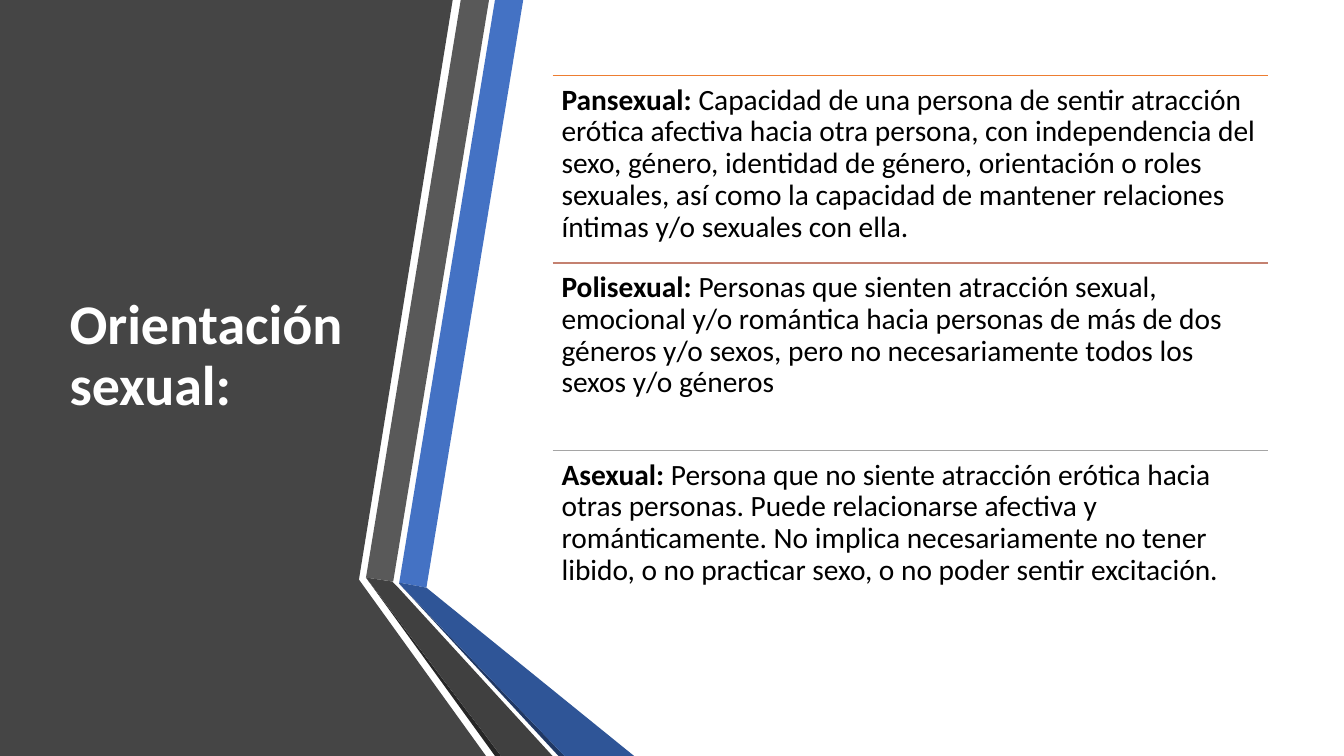
from dataclasses import dataclass

from lxml.etree import SubElement
from pptx import Presentation
from pptx.dml.color import RGBColor
from pptx.enum.shapes import MSO_CONNECTOR
from pptx.enum.text import MSO_ANCHOR, PP_ALIGN
from pptx.oxml.ns import qn
from pptx.util import Inches, Pt


@dataclass(frozen=True)
class Theme:
    font: str = "Calibri"
    title_size: int = 40
    body_size: int = 21
    title_color: str = "FFFFFF"
    body_color: str = "000000"
    panel: str = "454545"
    blue: str = "4472C4"
    blue_dark: str = "2F5597"
    blue_edge: str = "203864"
    gray: str = "595959"
    gray_dark: str = "404040"
    gray_edge: str = "262626"
    rules: tuple = ("ED7D31", "C48170", "A5A5A5")


THEME = Theme()
TITLE = "Orientación sexual:"
DEFINITIONS = [
    ("Pansexual:", " Capacidad de una persona de sentir atracción erótica afectiva hacia otra "
     "persona, con independencia del sexo, género, identidad de género, orientación o roles "
     "sexuales, así como la capacidad de mantener relaciones íntimas y/o sexuales con ella."),
    ("Polisexual:", " Personas que sienten atracción sexual, emocional y/o romántica hacia "
     "personas de más de dos géneros y/o sexos, pero no necesariamente todos los sexos y/o géneros"),
    ("Asexual:", " Persona que no siente atracción erótica hacia otras personas. Puede "
     "relacionarse afectiva y románticamente. No implica necesariamente no tener libido, "
     "o no practicar sexo, o no poder sentir excitación."),
]
BANDS = [
    (THEME.panel, [(0, 0), (4.49, 0), (3.56, 5.75), (4.82, 7.5), (0, 7.5)]),
    (THEME.blue, [(3.96, 5.78), (4.23, 5.83), (5.19, 0), (4.91, 0)]),
    (THEME.gray, [(4.85, 0), (4.57, 0), (3.63, 5.73), (3.9, 5.77)]),
    (THEME.gray_edge, [(3.63, 5.73), (4.91, 7.5), (4.97, 7.5)]),
    (THEME.blue_edge, [(3.96, 5.79), (5.54, 7.5), (5.6, 7.5)]),
    (THEME.blue_dark, [(3.96, 5.79), (5.6, 7.5), (6.29, 7.5), (4.23, 5.83), (3.96, 5.78)]),
    (THEME.gray_dark, [(5.48, 7.5), (3.95, 5.83), (3.89, 5.77), (3.63, 5.73), (4.97, 7.5)]),
]
LIST_LEFT, LIST_TOP, LIST_WIDTH, LIST_HEIGHT = 5.48, 0.75, 7.1, 5.58
ROW_HEIGHT = LIST_HEIGHT / len(DEFINITIONS)
INSET = 0.09


def style_run(run, size, color, bold):
    run.font.name = THEME.font
    run.font.size = Pt(size)
    run.font.bold = bold
    run.font.color.rgb = RGBColor.from_string(color)


def add_band(slide, color, points):
    corners = [(Inches(x), Inches(y)) for x, y in points]
    builder = slide.shapes.build_freeform(*corners[0])
    builder.add_line_segments(corners[1:], close=True)
    shape = builder.convert_to_shape()
    shape.shadow.inherit = False
    shape.fill.solid()
    shape.fill.fore_color.rgb = RGBColor.from_string(color)
    shape.line.fill.background()


def add_title(slide):
    title = slide.shapes.title
    title.left, title.top = Inches(0.59), Inches(LIST_TOP)
    title.width, title.height = Inches(3.04), Inches(LIST_HEIGHT)
    frame = title.text_frame
    frame.text = TITLE
    frame.word_wrap = True
    frame.vertical_anchor = MSO_ANCHOR.MIDDLE
    paragraph = frame.paragraphs[0]
    paragraph.alignment = PP_ALIGN.LEFT
    paragraph.line_spacing = 0.9
    style_run(paragraph.runs[0], THEME.title_size, THEME.title_color, True)
    slide.shapes._spTree.append(title._element)


def add_rule(slide, top, color):
    rule = slide.shapes.add_connector(
        MSO_CONNECTOR.STRAIGHT, Inches(LIST_LEFT), Inches(top),
        Inches(LIST_LEFT + LIST_WIDTH), Inches(top))
    rule.line.color.rgb = RGBColor.from_string(color)
    rule.line.width = Pt(1)
    SubElement(rule._element.spPr, qn("a:effectLst"))


def add_definition(slide, top, term, meaning):
    box = slide.shapes.add_textbox(
        Inches(LIST_LEFT), Inches(top), Inches(LIST_WIDTH), Inches(ROW_HEIGHT))
    frame = box.text_frame
    frame.word_wrap = True
    frame.margin_left = frame.margin_right = Inches(INSET)
    frame.margin_top = frame.margin_bottom = Inches(INSET)
    paragraph = frame.paragraphs[0]
    paragraph.line_spacing = 0.9
    for text, bold in ((term, True), (meaning, False)):
        run = paragraph.add_run()
        run.text = text
        style_run(run, THEME.body_size, THEME.body_color, bold)


def main():
    presentation = Presentation()
    presentation.slide_width = Inches(13.33)
    presentation.slide_height = Inches(7.5)
    slide = presentation.slides.add_slide(presentation.slide_layouts[5])
    for color, points in BANDS:
        add_band(slide, color, points)
    add_title(slide)
    for index, (term, meaning) in enumerate(DEFINITIONS):
        top = LIST_TOP + index * ROW_HEIGHT
        add_rule(slide, top, THEME.rules[index])
        add_definition(slide, top, term, meaning)
    presentation.save("out.pptx")


if __name__ == "__main__":
    main()
